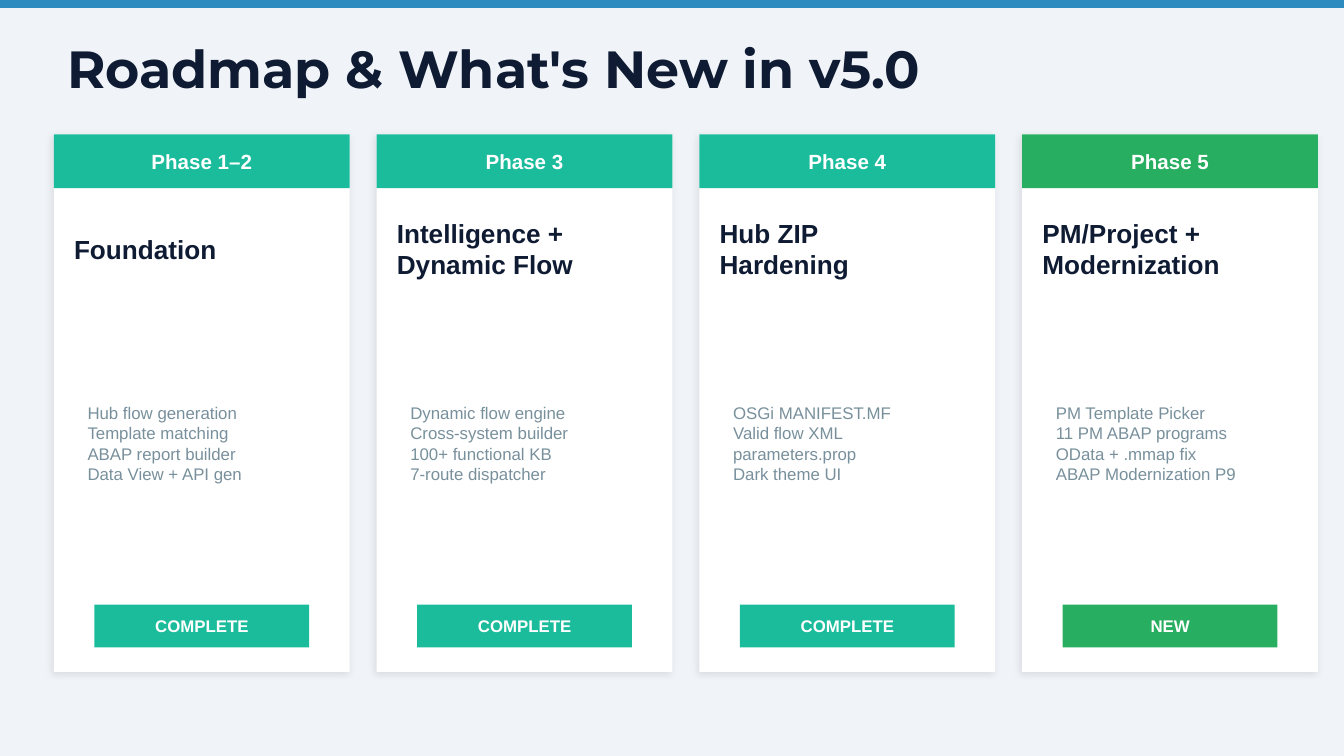
from lxml import etree
from pptx import Presentation
from pptx.dml.color import RGBColor
from pptx.enum import shapes, text
from pptx.oxml.ns import qn
from pptx.util import Cm, Pt

# Content
TITLE = "Roadmap & What's New in v5.0"
TEAL, GREEN = "1ABC9C", "27AE60"
NAVY, GREY, WHITE = "0F1B33", "78909C", "FFFFFF"
PHASES = [
    ("Phase 1–2", ["Foundation"],
     ["Hub flow generation", "Template matching",
      "ABAP report builder", "Data View + API gen"], "COMPLETE", TEAL),
    ("Phase 3", ["Intelligence +", "Dynamic Flow"],
     ["Dynamic flow engine", "Cross-system builder",
      "100+ functional KB", "7-route dispatcher"], "COMPLETE", TEAL),
    ("Phase 4", ["Hub ZIP", "Hardening"],
     ["OSGi MANIFEST.MF", "Valid flow XML",
      "parameters.prop", "Dark theme UI"], "COMPLETE", TEAL),
    ("Phase 5", ["PM/Project +", "Modernization"],
     ["PM Template Picker", "11 PM ABAP programs",
      "OData + .mmap fix", "ABAP Modernization P9"], "NEW", GREEN),
]

# Layout in centimetres
WIDTH, HEIGHT = 25.4, 14.29
LEFT, TOP, STEP = 1.02, 2.54, 6.1
CARD_W, CARD_H, HEAD_H = 5.59, 10.16, 1.02
TEXT_W, TAG_W, TAG_H = 4.83, 4.06, 0.81


def paint(fill, color):
    fill.solid()
    fill.fore_color.rgb = RGBColor.from_string(color)


def place(shape, x, y, w, h):
    shape.left, shape.top, shape.width, shape.height = Cm(x), Cm(y), Cm(w), Cm(h)
    slide.shapes._spTree.append(shape._element)  # bring to front


def rect(x, y, w, h, color):
    shape = slide.shapes.add_shape(
        shapes.MSO_SHAPE.RECTANGLE, Cm(x), Cm(y), Cm(w), Cm(h))
    shape.shadow.inherit = False
    paint(shape.fill, color)
    shape.line.fill.background()
    return shape


def write(shape, lines, size, color, font="Arial", bold=True,
          align=text.PP_ALIGN.LEFT, inset=True):
    frame = shape.text_frame
    frame.word_wrap = True
    frame.auto_size = text.MSO_AUTO_SIZE.NONE
    frame.vertical_anchor = text.MSO_ANCHOR.MIDDLE
    if not inset:
        frame.margin_left = frame.margin_right = 0
        frame.margin_top = frame.margin_bottom = 0
    frame.text = "\n".join(lines)
    for par in frame.paragraphs:
        props = par._p.get_or_add_pPr()
        props.set("marL", "0")
        props.set("indent", "0")
        etree.SubElement(props, qn("a:buNone"))
        par.alignment = align
        par.space_before = Pt(0)
        for run in par.runs:
            run.font.name, run.font.size, run.font.bold = font, Pt(size), bold
            run.font.color.rgb = RGBColor.from_string(color)


def shade(shape):
    effects = shape._element.spPr.find(qn("a:effectLst"))
    shadow = etree.SubElement(
        effects, qn("a:outerShdw"), blurRad=str(Pt(4)), dist=str(Pt(1.5)),
        dir=str(135 * 60000), algn="bl", rotWithShape="0")
    black = etree.SubElement(shadow, qn("a:srgbClr"), val="000000")
    etree.SubElement(black, qn("a:alpha"), val="10000")


# Slide: the comparison layout has a title and four body placeholders
deck = Presentation()
deck.slide_width, deck.slide_height = Cm(WIDTH), Cm(HEIGHT)
slide = deck.slides.add_slide(deck.slide_layouts[4])
paint(slide.background.fill, "F0F4F8")
bodies = [slide.placeholders[i] for i in (1, 2, 3, 4)]

# Top bar and title
rect(0, 0, WIDTH, 0.15, "2E8BC0")
title = slide.shapes.title
place(title, 1.27, 0.51, 22.86, 1.52)
write(title, [TITLE], 28, NAVY, font="Montserrat", inset=False)

# Phase cards
center = text.PP_ALIGN.CENTER
for i, (phase, name, items, status, color) in enumerate(PHASES):
    x = LEFT + i * STEP
    inner = x + (CARD_W - TEXT_W) / 2
    shade(rect(x, TOP, CARD_W, CARD_H, WHITE))

    head = rect(x, TOP, CARD_W, HEAD_H, color)
    write(head, [phase], 11, WHITE, align=center)

    label = slide.shapes.add_textbox(
        Cm(inner), Cm(3.81), Cm(TEXT_W), Cm(1.78))
    write(label, name, 14, NAVY, inset=False)

    place(bodies[i], inner, 5.84, TEXT_W, 5.08)
    write(bodies[i], items, 9, GREY, bold=False)

    tag = rect(x + (CARD_W - TAG_W) / 2, 11.43, TAG_W, TAG_H, color)
    write(tag, [status], 9, WHITE, align=center)

deck.save("out.pptx")
